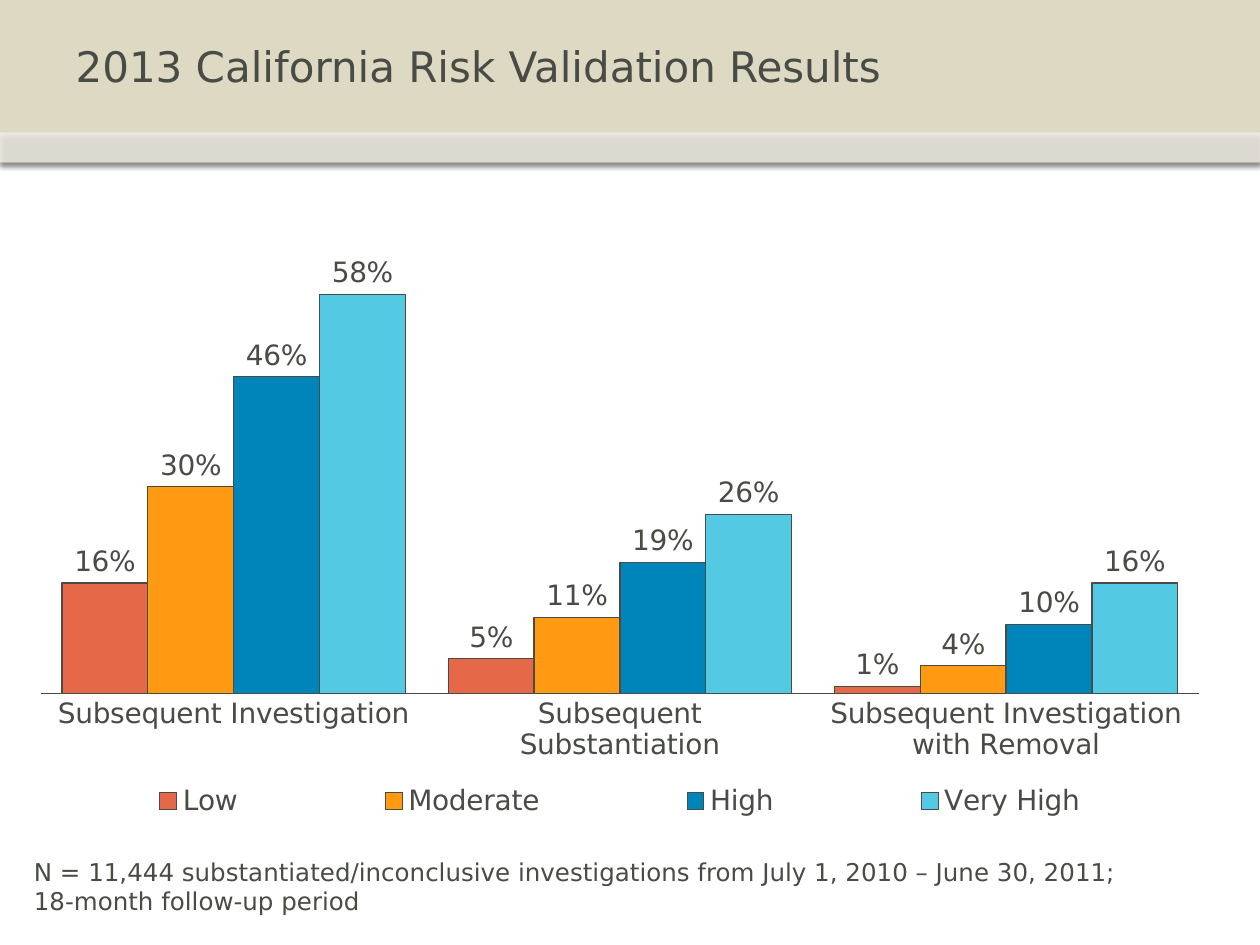
from dataclasses import dataclass

from lxml.etree import SubElement
from pptx import Presentation
from pptx.chart.chart import Chart
from pptx.chart.data import CategoryChartData
from pptx.dml.color import RGBColor
from pptx.enum.chart import XL_CHART_TYPE, XL_LABEL_POSITION, XL_LEGEND_POSITION, XL_TICK_MARK
from pptx.enum.shapes import MSO_SHAPE
from pptx.enum.text import MSO_ANCHOR, PP_ALIGN
from pptx.oxml import parse_xml
from pptx.oxml.ns import nsdecls, qn
from pptx.slide import Slide
from pptx.text.text import Font
from pptx.util import Inches, Pt


@dataclass(frozen=True)
class Theme:
    face: str = "DejaVu Sans"
    ink: str = "484C45"
    sand: str = "DDD9C3"
    white: str = "FFFFFF"
    title: int = 24
    label: int = 16
    note: int = 14
    line: float = 0.75


@dataclass(frozen=True)
class Band:
    top: float
    height: float
    fill: str
    alpha: int


@dataclass(frozen=True)
class Risk:
    name: str
    rates: tuple[float, ...]
    color: str


THEME = Theme()
BANDS = (Band(0, 1.29, THEME.sand, 100), Band(1.05, 0.24, THEME.white, 53))
GROUPS = (
    "Subsequent Investigation",
    "Subsequent Substantiation",
    "Subsequent Investigation with Removal",
)
RISKS = (
    Risk("Low", (0.16, 0.05, 0.01), "E56849"),
    Risk("Moderate", (0.30, 0.11, 0.04), "FF9A12"),
    Risk("High", (0.46, 0.19, 0.10), "0085BA"),
    Risk("Very High", (0.58, 0.26, 0.16), "53C9E4"),
)
NOTE = (
    "N = 11,444 substantiated/inconclusive investigations from July 1, 2010 – June 30, 2011;\n"
    "18-month follow-up period"
)


def rgb(code: str) -> RGBColor:
    return RGBColor.from_string(code)


def style(font: Font, size: int) -> None:
    font.name, font.size = THEME.face, Pt(size)
    font.color.rgb = rgb(THEME.ink)


def draw_band(slide: Slide, band: Band) -> None:
    shape = slide.shapes.add_shape(
        MSO_SHAPE.RECTANGLE, 0, Inches(band.top), Inches(10), Inches(band.height)
    )
    shape.fill.solid()
    shape.fill.fore_color.rgb = rgb(band.fill)
    shape.line.fill.background()
    props = shape._element.spPr
    if band.alpha < 100:
        color = props.find(qn("a:solidFill"))[0]
        SubElement(color, qn("a:alpha"), val=str(band.alpha * 1000))
    props.append(parse_xml(
        f'<a:effectLst {nsdecls("a")}>'
        f'<a:outerShdw blurRad="{Pt(3.1)}" dist="{Pt(1.8)}" dir="5400000" rotWithShape="0">'
        '<a:srgbClr val="000000"><a:alpha val="35000"/></a:srgbClr>'
        "</a:outerShdw></a:effectLst>"
    ))


def place(part, box: tuple[float, ...], inner: bool = False) -> None:
    """Give a chart part a manual layout, in fractions of the chart."""
    target = '<c:layoutTarget val="inner"/>' if inner else ""
    modes = "".join(f'<c:{key}Mode val="edge"/>' for key in "xy")
    sizes = "".join(f'<c:{key} val="{val}"/>' for key, val in zip("xywh", box))
    layout = parse_xml(
        f'<c:layout {nsdecls("c")}><c:manualLayout>{target}{modes}{sizes}'
        "</c:manualLayout></c:layout>"
    )
    old = part.find(qn("c:layout"))
    if old is not None:
        part.remove(old)
    if inner:
        part.insert(0, layout)
    else:
        part.find(qn("c:legendPos")).addnext(layout)


def style_axes(chart: Chart) -> None:
    axis = chart.category_axis
    axis.major_tick_mark = axis.minor_tick_mark = XL_TICK_MARK.NONE
    axis.format.line.color.rgb = rgb(THEME.ink)
    axis.format.line.width = Pt(THEME.line)
    style(axis.tick_labels.font, THEME.label)
    scale = chart.value_axis
    scale.minimum_scale, scale.maximum_scale = 0, 0.7
    scale.has_major_gridlines = False
    scale.visible = False


def draw_chart(slide: Slide) -> None:
    data = CategoryChartData(number_format="0%")
    data.categories = GROUPS
    for risk in RISKS:
        data.add_series(risk.name, risk.rates)
    chart = slide.shapes.add_chart(
        XL_CHART_TYPE.COLUMN_CLUSTERED,
        Inches(0.17), Inches(1.53), Inches(9.5), Inches(5.22), data,
    ).chart
    style(chart.font, 10)
    chart.has_title = False
    style_axes(chart)
    plot = chart.plots[0]
    plot.gap_width, plot.overlap = 50, 0
    plot.vary_by_categories = False
    for series, risk in zip(plot.series, RISKS):
        series.format.fill.solid()
        series.format.fill.fore_color.rgb = rgb(risk.color)
        series.format.line.color.rgb = rgb(THEME.ink)
        series.format.line.width = Pt(THEME.line)
        labels = series.data_labels
        labels.show_value = True
        labels.number_format, labels.number_format_is_linked = "0%", False
        labels.position = XL_LABEL_POSITION.OUTSIDE_END
        style(labels.font, THEME.label)
    chart.has_legend = True
    legend = chart.legend
    legend.position = XL_LEGEND_POSITION.BOTTOM
    legend.include_in_layout = False
    style(legend.font, THEME.label)
    place(legend._element, (0, 0.89, 1, 0.07))
    area = chart._chartSpace.chart.plotArea
    place(area, (0.016, 0.029, 0.968, 0.732), inner=True)


def draw_title(slide: Slide) -> None:
    title = slide.shapes.title
    title.left, title.top = Inches(0.5), Inches(0)
    title.width, title.height = Inches(9), Inches(1.05)
    frame = title.text_frame
    frame.text = "2013 California Risk Validation Results"
    frame.vertical_anchor = MSO_ANCHOR.MIDDLE
    line = frame.paragraphs[0]
    line.alignment = PP_ALIGN.LEFT
    style(line.runs[0].font, THEME.title)
    slide.shapes._spTree.append(title._element)  # in front of the bands


def draw_note(slide: Slide) -> None:
    box = slide.shapes.add_textbox(Inches(0.17), Inches(6.75), Inches(9.83), Inches(0.57))
    frame = box.text_frame
    frame.word_wrap = True
    frame.text = NOTE
    for line in frame.paragraphs:
        style(line.runs[0].font, THEME.note)


def main() -> None:
    deck = Presentation()
    deck.slide_width, deck.slide_height = Inches(10), Inches(7.5)
    slide = deck.slides.add_slide(deck.slide_layouts[5])
    for band in BANDS:
        draw_band(slide, band)
    draw_title(slide)
    draw_chart(slide)
    draw_note(slide)
    deck.save("out.pptx")


if __name__ == "__main__":
    main()
